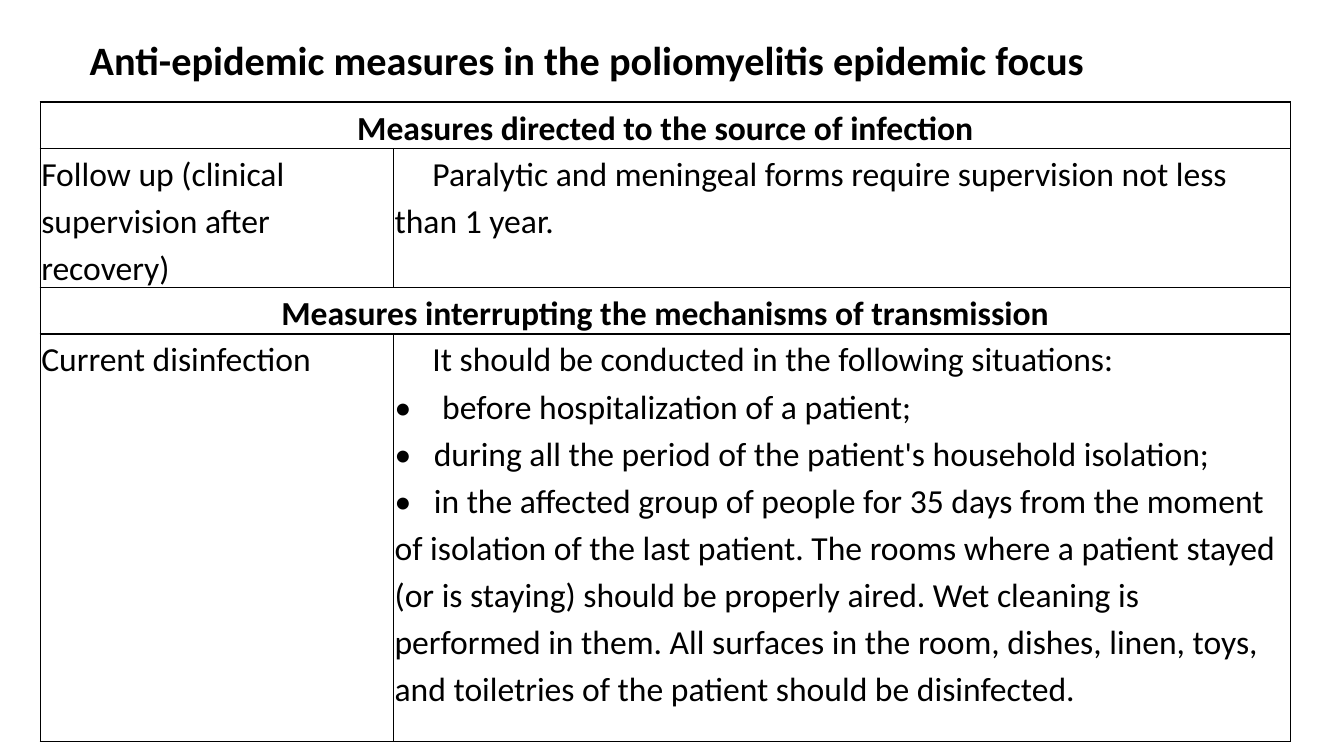
from dataclasses import dataclass

from lxml import etree
from pptx import Presentation
from pptx.dml.color import RGBColor
from pptx.enum.text import MSO_ANCHOR, PP_ALIGN
from pptx.oxml.ns import qn
from pptx.util import Pt

TOP = MSO_ANCHOR.TOP
LEFT, CENTER = PP_ALIGN.LEFT, PP_ALIGN.CENTER
COLORS = {"text": "000000", "border": "000000"}
FONT = "Calibri"
COLUMN_WIDTHS = (252.4, 640.5)
BORDER_TAGS = ("a:lnL", "a:lnR", "a:lnT", "a:lnB")


@dataclass(frozen=True)
class Para:
    text: str
    indent: float = 0
    bullet_tab: float = 0


@dataclass(frozen=True)
class Row:
    height: float
    cells: tuple[tuple[Para, ...], ...]


def heading(text: str) -> Row:
    return Row(32.4, ((Para(text),),))


ROWS = (
    heading("Measures directed to the source of infection"),
    Row(97.2, (
        (Para("Follow up (clinical supervision after recovery)"),),
        (Para("Paralytic and meningeal forms require supervision "
              "not less than 1 year.", indent=27),),
    )),
    heading("Measures interrupting the mechanisms of transmission"),
    Row(290.9, (
        (Para("Current disinfection"),),
        (
            Para("It should be conducted in the following situations:", indent=27),
            Para("before hospitalization of a patient;", bullet_tab=34),
            Para("during all the period of the patient's household isolation;",
                 bullet_tab=28),
            Para("in the affected group of people for 35 days from the moment of "
                 "isolation of the last patient. The rooms where a patient stayed "
                 "(or is staying) should be properly aired. Wet cleaning is "
                 "performed in them. All surfaces in the room, dishes, linen, toys, "
                 "and toiletries of the patient should be disinfected.",
                 bullet_tab=28),
        ),
    )),
)


def style_paragraph(p, size: float, bold: bool, spacing: float, align) -> None:
    p.line_spacing = spacing
    p.alignment = align
    for r in p.runs:
        r.font.name = FONT
        r.font.size = Pt(size)
        r.font.bold = bold
        r.font.color.rgb = RGBColor.from_string(COLORS["text"])


def set_indent(p, para: Para) -> None:
    pPr = p._p.get_or_add_pPr()
    pPr.set("marL", "0")
    pPr.set("indent", str(Pt(para.indent)))
    if para.bullet_tab:
        etree.SubElement(pPr, qn("a:buFont"), typeface=FONT)
        etree.SubElement(pPr, qn("a:buChar"), char="•")
        tabs = etree.SubElement(pPr, qn("a:tabLst"))
        etree.SubElement(tabs, qn("a:tab"), pos=str(Pt(para.bullet_tab)), algn="l")


def format_cell(cell) -> None:
    cell.margin_left = cell.margin_right = Pt(0.7)
    cell.margin_top = cell.margin_bottom = Pt(0)
    cell.vertical_anchor = TOP
    cell.fill.background()
    tcPr = cell._tc.get_or_add_tcPr()
    for i, tag in enumerate(BORDER_TAGS):
        line = etree.Element(qn(tag), w=str(Pt(1)))
        fill = etree.SubElement(line, qn("a:solidFill"))
        etree.SubElement(fill, qn("a:srgbClr"), val=COLORS["border"])
        tcPr.insert(i, line)


def fill_cell(cell, paras: tuple[Para, ...], is_heading: bool) -> None:
    tf = cell.text_frame
    for i, para in enumerate(paras):
        p = tf.add_paragraph() if i else tf.paragraphs[0]
        p.text = f"\t{para.text}" if para.bullet_tab else para.text
        set_indent(p, para)
        style_paragraph(p, 24, is_heading, 1.15, CENTER if is_heading else LEFT)


def add_title(s) -> None:
    sp = s.shapes.add_textbox(Pt(57), Pt(26.6), Pt(828), Pt(40))
    tf = sp.text_frame
    tf.word_wrap = True
    tf.vertical_anchor = TOP
    tf.margin_top = Pt(2.5)
    tf.text = "Anti-epidemic measures in the poliomyelitis epidemic focus"
    style_paragraph(tf.paragraphs[0], 28.8, True, 0.9, LEFT)


def add_measures_table(s) -> None:
    height = sum(row.height for row in ROWS)
    table = s.shapes.add_table(
        len(ROWS), len(COLUMN_WIDTHS), Pt(28.8), Pt(72.9),
        Pt(sum(COLUMN_WIDTHS)), Pt(height)).table
    table.first_row = False
    table.horz_banding = False
    for column, width in zip(table.columns, COLUMN_WIDTHS):
        column.width = Pt(width)
    for i, row in enumerate(ROWS):
        table.rows[i].height = Pt(row.height)
        for cell in table.rows[i].cells:
            format_cell(cell)
        is_heading = len(row.cells) == 1
        if is_heading:
            table.cell(i, 0).merge(table.cell(i, 1))
        for j, paras in enumerate(row.cells):
            fill_cell(table.cell(i, j), paras, is_heading)


def main() -> None:
    prs = Presentation()
    prs.slide_width = Pt(960)
    prs.slide_height = Pt(540)
    s = prs.slides.add_slide(prs.slide_layouts[6])
    add_title(s)
    add_measures_table(s)
    prs.save("out.pptx")


if __name__ == "__main__":
    main()
